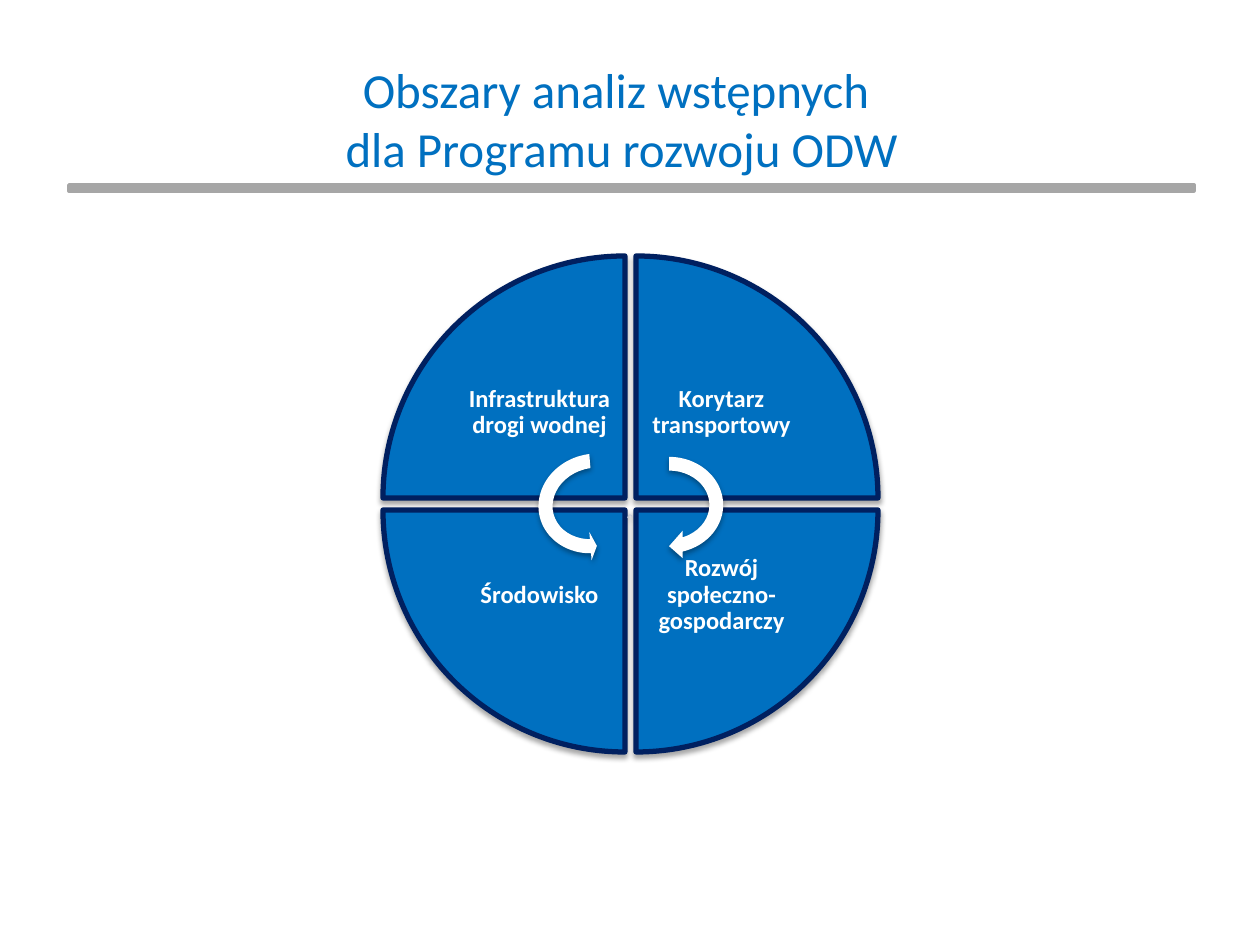
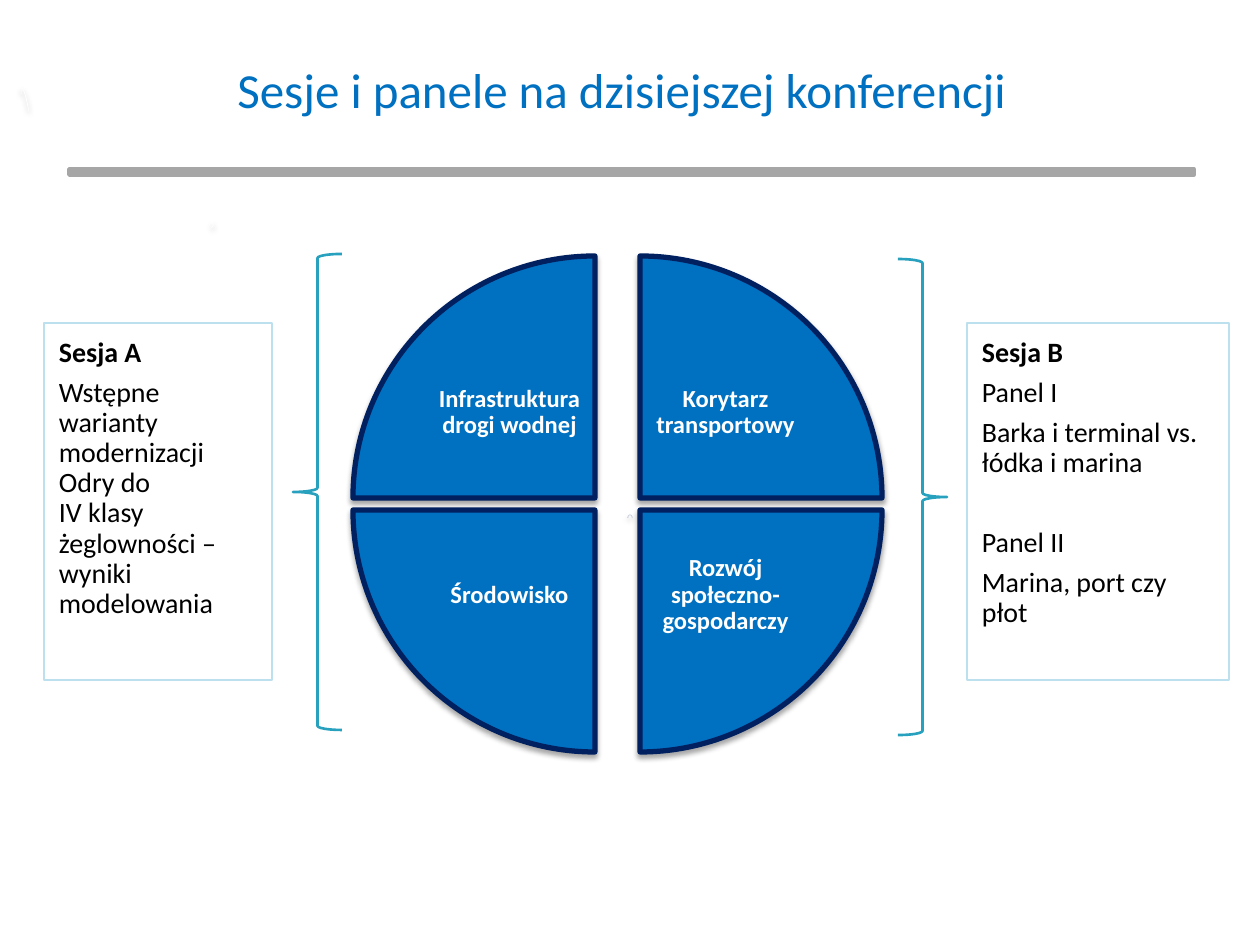
from lxml import etree
from pptx import Presentation
from pptx.dml.color import RGBColor
from pptx.enum.shapes import MSO_SHAPE
from pptx.enum.text import MSO_ANCHOR, PP_ALIGN
from pptx.oxml.ns import qn
from pptx.util import Emu, Pt

RECTANGLE = MSO_SHAPE.RECTANGLE
PIE_WEDGE = MSO_SHAPE.PIE_WEDGE
CIRCULAR_ARROW = MSO_SHAPE.CIRCULAR_ARROW
LEFT_BRACE = MSO_SHAPE.LEFT_BRACE
TOP, MIDDLE = MSO_ANCHOR.TOP, MSO_ANCHOR.MIDDLE
LEFT, CENTER = PP_ALIGN.LEFT, PP_ALIGN.CENTER

FONT = "Calibri"
BLUE, NAVY, GRAY = "0070C0", "002060", "A6A6A6"
TEAL, PALE_BLUE, PALE_GRAY = "28A1BE", "BDE0EF", "C5CBDA"
WHITE, BLACK = "FFFFFF", "000000"

PX_PER_INCH = 126
PAGE_WIDTH, PAGE_HEIGHT = 1260, 945
WEDGE, LABEL, ROW_GAP = 242, 171, 12
# Clockwise from the upper left: column, row, label
AREAS = [
    (0, 0, "Infrastruktura drogi wodnej"),
    (1, 0, "Korytarz transportowy"),
    (1, 1, "Rozwój społeczno-gospodarczy"),
    (0, 1, "Środowisko"),
]
SWEPT_ARROW = (0.125, 5.095, 204.577, 101.947, 0.125)


def px(length):
    return Emu(round(length * 914400 / PX_PER_INCH))


def color(code):
    return RGBColor.from_string(code)


def add_shadow(shape):
    effects = shape._element.spPr.find(qn("a:effectLst"))
    shadow = etree.SubElement(effects, qn("a:outerShdw"), blurRad="39400",
                              dist="23000", dir="5400000", rotWithShape="0")
    tint = etree.SubElement(shadow, qn("a:srgbClr"), val=BLACK)
    etree.SubElement(tint, qn("a:alpha"), val="35000")


def add_figure(page, kind, box, fill=None, line=None, weight=1, rotation=0,
               flips="", shadow=False):
    shape = page.shapes.add_shape(kind, *map(px, box))
    shape.rotation = rotation
    shape.shadow.inherit = False
    if fill:
        shape.fill.solid()
        shape.fill.fore_color.rgb = color(fill)
    else:
        shape.fill.background()
    if line:
        shape.line.color.rgb = color(line)
        shape.line.width = Pt(weight)
    else:
        shape.line.fill.background()
    for axis in flips:
        shape._element.spPr.find(qn("a:xfrm")).set("flip" + axis, "1")
    if shadow:
        add_shadow(shape)
    return shape


def add_text(page, box, paragraphs, size, ink=BLACK, align=LEFT, anchor=TOP,
             inset=None, spacing=None, after=0):
    """Each paragraph is (text, bold, points of space before)."""
    frame = page.shapes.add_textbox(*map(px, box)).text_frame
    frame.word_wrap = True
    frame.vertical_anchor = anchor
    if inset is not None:
        frame.margin_left = frame.margin_right = px(inset)
        frame.margin_top = frame.margin_bottom = px(inset)
    for index, (text, bold, before) in enumerate(paragraphs):
        para = frame.add_paragraph() if index else frame.paragraphs[0]
        para.text = text
        para.alignment = align
        para.line_spacing = spacing
        para.space_before, para.space_after = Pt(before), Pt(after)
        for span in para.runs:
            span.font.name = FONT
            span.font.size = Pt(size)
            span.font.bold = bold
            span.font.color.rgb = color(ink)


def add_header(page, title, rule_top):
    # Title
    add_text(page, (117, 53, 1009, 131), [(title, False, 0)], 28, BLUE, CENTER)
    # Rule made of five equal segments
    for index in range(5):
        add_figure(page, RECTANGLE, (69 + 225 * index, rule_top, 225, 6),
                   GRAY, GRAY, 2)


def add_wheel(page, left, top, column_gap):
    for turn, (column, row, text) in enumerate(AREAS):
        x = left + column * (WEDGE + column_gap)
        y = top + row * (WEDGE + ROW_GAP)
        add_figure(page, PIE_WEDGE, (x, y, WEDGE, WEDGE), BLUE, NAVY, 3,
                   rotation=90 * turn, shadow=True)
        # The label fills the corner nearest the hub
        label_left = x + (1 - column) * (WEDGE - LABEL)
        label_top = y + (1 - row) * (WEDGE - LABEL)
        add_text(page, (label_left, label_top, LABEL, LABEL),
                 [(text, True, 0)], 14, WHITE, CENTER, MIDDLE, 14, 0.9)


def add_arrow(page, box, rotation, flips="", fill=WHITE, sweep=()):
    arrow = add_figure(page, CIRCULAR_ARROW, box, fill, rotation=rotation,
                       flips=flips, shadow=True)
    for index, value in enumerate(sweep):
        arrow.adjustments[index] = value


def add_hub_mark(page):
    add_arrow(page, (627, 514, 6, 8), 180, "V", PALE_GRAY)


def add_session(page, box, paragraphs):
    add_figure(page, RECTANGLE, box, line=PALE_BLUE, weight=0.75)
    add_text(page, box, paragraphs, 16, inset=15, spacing=0.9, after=5.6)


def build_areas(page):
    add_header(page, "Obszary analiz wstępnych \ndla Programu rozwoju ODW", 185)
    add_wheel(page, 383, 256, 11)
    # Arrows around the hub
    add_arrow(page, (614, 444, 110, 122), 90)
    add_hub_mark(page)
    add_arrow(page, (537, 441, 113, 125), 255, "H", sweep=SWEPT_ARROW)


def build_sessions(page):
    add_header(page, "Sesje i panele na dzisiejszej konferencji", 169)
    add_wheel(page, 353, 256, 45)
    # Small arrows
    add_arrow(page, (208, 222, 6, 6), 90, "H")
    add_hub_mark(page)
    add_arrow(page, (9, 100, 32, 6), 258.2, "HV", sweep=SWEPT_ARROW)
    # Braces
    for left, top, rotation in [(293, 254, 0), (898, 259, 180)]:
        add_figure(page, LEFT_BRACE, (left, top, 49, 476), line=TEAL,
                   weight=1.5, rotation=rotation)
    # Session cards
    add_session(page, (44, 323, 228, 357), [
        ("Sesja A", True, 0),
        ("Wstępne \nwarianty modernizacji \nOdry do \nIV klasy \n"
         "żeglowności – wyniki modelowania", False, 0),
    ])
    add_session(page, (967, 323, 262, 357), [
        ("Sesja B", True, 0),
        ("Panel I", False, 0),
        ("Barka i terminal vs. łódka i marina", False, 0),
        ("Panel II", False, 22.8),
        ("Marina, port czy płot", False, 0),
    ])


def main():
    deck = Presentation()
    deck.slide_width, deck.slide_height = px(PAGE_WIDTH), px(PAGE_HEIGHT)
    for build in (build_areas, build_sessions):
        build(deck.slides.add_slide(deck.slide_layouts[6]))
    deck.save("out.pptx")


if __name__ == "__main__":
    main()
